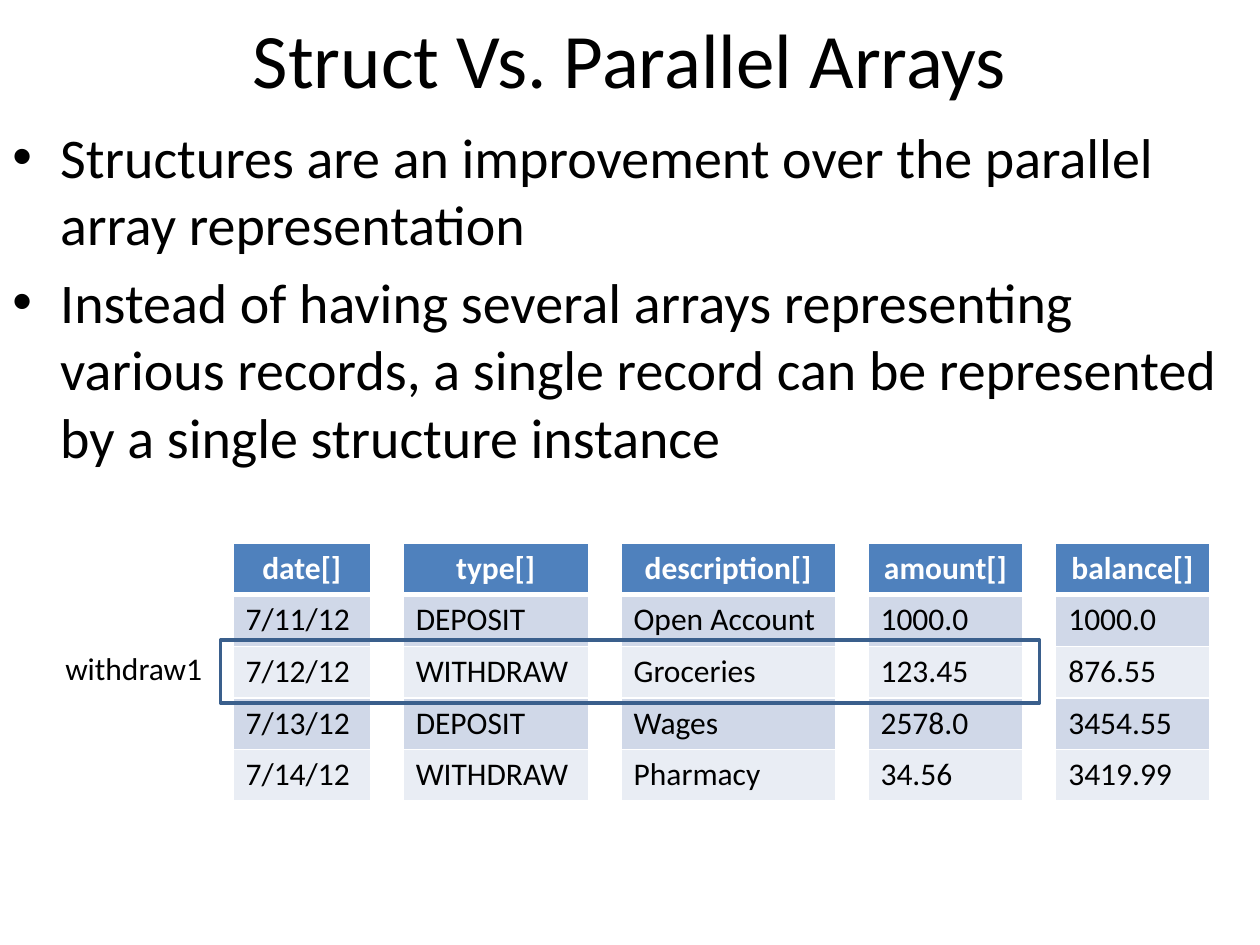
from dataclasses import dataclass
from lxml import etree
from pptx import Presentation, util as u
from pptx.dml.color import RGBColor
from pptx.enum import shapes, text
from pptx.oxml import ns

Inches, Pt = u.Inches, u.Pt


@dataclass(frozen=True)
class Theme:
    font: str = "Calibri"
    ink: str = "000000"
    white: str = "FFFFFF"
    head: str = "4F81BD"
    bands: tuple = ("D0D8E8", "E9EDF4")
    frame: str = "3A5F8C"
    title: int = 44
    body: int = 32
    small: int = 18


theme = Theme()


def write(frame, *lines, size=theme.small, color=theme.ink, bold=False,
          align=text.PP_ALIGN.LEFT, anchor=text.MSO_ANCHOR.TOP,
          wrap=True, bullet=False):
    """Fill a text frame with one paragraph for each line."""
    frame.word_wrap = wrap
    frame.vertical_anchor = anchor
    for i, line in enumerate(lines):
        para = frame.paragraphs[0] if i == 0 else frame.add_paragraph()
        para.alignment = align
        run = para.add_run()
        run.text = line
        run.font.name = theme.font
        run.font.size = Pt(size)
        run.font.bold = bold
        run.font.color.rgb = RGBColor.from_string(color)
        if bullet:
            para.space_before = Pt(size * 0.2)
            props = para._p.get_or_add_pPr()
            props.set("marL", str(Inches(0.38)))
            props.set("indent", str(-Inches(0.38)))
            etree.SubElement(props, ns.qn("a:buFont")).set("typeface", "Arial")
            etree.SubElement(props, ns.qn("a:buChar")).set("char", "•")


def edge(cell, **widths):
    """Draw white cell borders; widths are in points, by side."""
    props = cell._tc.get_or_add_tcPr()
    for side in "LRTB":
        line = etree.SubElement(props, ns.qn(f"a:ln{side}"))
        line.set("w", str(Pt(widths.get(side, 1))))
        fill = etree.SubElement(line, ns.qn("a:solidFill"))
        etree.SubElement(fill, ns.qn("a:srgbClr")).set("val", theme.white)


deck = Presentation()
deck.slide_width, deck.slide_height = Inches(10), Inches(7.5)
slide = deck.slides.add_slide(deck.slide_layouts[6])
items = slide.shapes

# Title
title = items.add_textbox(0, 0, Inches(10), Inches(0.92))
write(title.text_frame, "Struct Vs. Parallel Arrays", size=theme.title,
      align=text.PP_ALIGN.CENTER, anchor=text.MSO_ANCHOR.MIDDLE)

# Bullets
body = items.add_textbox(0, Inches(0.92), Inches(10), Inches(6.58))
write(body.text_frame,
      "Structures are an improvement over the parallel array representation",
      "Instead of having several arrays representing various records, "
      "a single record can be represented by a single structure instance",
      size=theme.body, bullet=True)

# Parallel arrays: data columns with clear gaps between them
heads = ["date[]", "type[]", "description[]", "amount[]", "balance[]"]
records = [
    ["7/11/12", "DEPOSIT", "Open Account", "1000.0", "1000.0"],
    ["7/12/12", "WITHDRAW", "Groceries", "123.45", "876.55"],
    ["7/13/12", "DEPOSIT", "Wages", "2578.0", "3454.55"],
    ["7/14/12", "WITHDRAW", "Pharmacy", "34.56", "3419.99"],
]
rows = [heads] + records
widths = [1.09, 1.47, 1.7, 1.23, 1.22]
gap = 0.26
count = 2 * len(heads) - 1
table = items.add_table(len(rows), count, Inches(1.85), Inches(4.31),
                        Inches(7.74), Inches(2.03)).table
table.horz_banding = False
for c, column in enumerate(table.columns):
    column.width = Inches(gap if c % 2 else widths[c // 2])
for r, values in enumerate(rows):
    table.rows[r].height = Inches(0.41)
    for c in range(count):
        cell = table.cell(r, c)
        edge(cell, T=3 if r == 1 else 1, B=3 if r == 0 else 1)
        if c % 2:
            cell.fill.background()
            continue
        cell.fill.solid()
        shade = theme.bands[(r - 1) % 2] if r else theme.head
        cell.fill.fore_color.rgb = RGBColor.from_string(shade)
        write(cell.text_frame, values[c // 2], bold=r == 0,
              color=theme.ink if r else theme.white,
              align=text.PP_ALIGN.LEFT if r else text.PP_ALIGN.CENTER)

# Frame around one record, with its name
frame = items.add_shape(shapes.MSO_SHAPE.RECTANGLE, Inches(1.75),
                        Inches(5.08), Inches(6.5), Inches(0.5))
frame.shadow.inherit = False
frame.fill.background()
frame.line.color.rgb = RGBColor.from_string(theme.frame)
frame.line.width = Pt(2)
label = items.add_textbox(Inches(0.42), Inches(5.1), Inches(1.3), Inches(0.4))
write(label.text_frame, "withdraw1", wrap=False)
label.text_frame.auto_size = text.MSO_AUTO_SIZE.SHAPE_TO_FIT_TEXT

deck.save("out.pptx")
